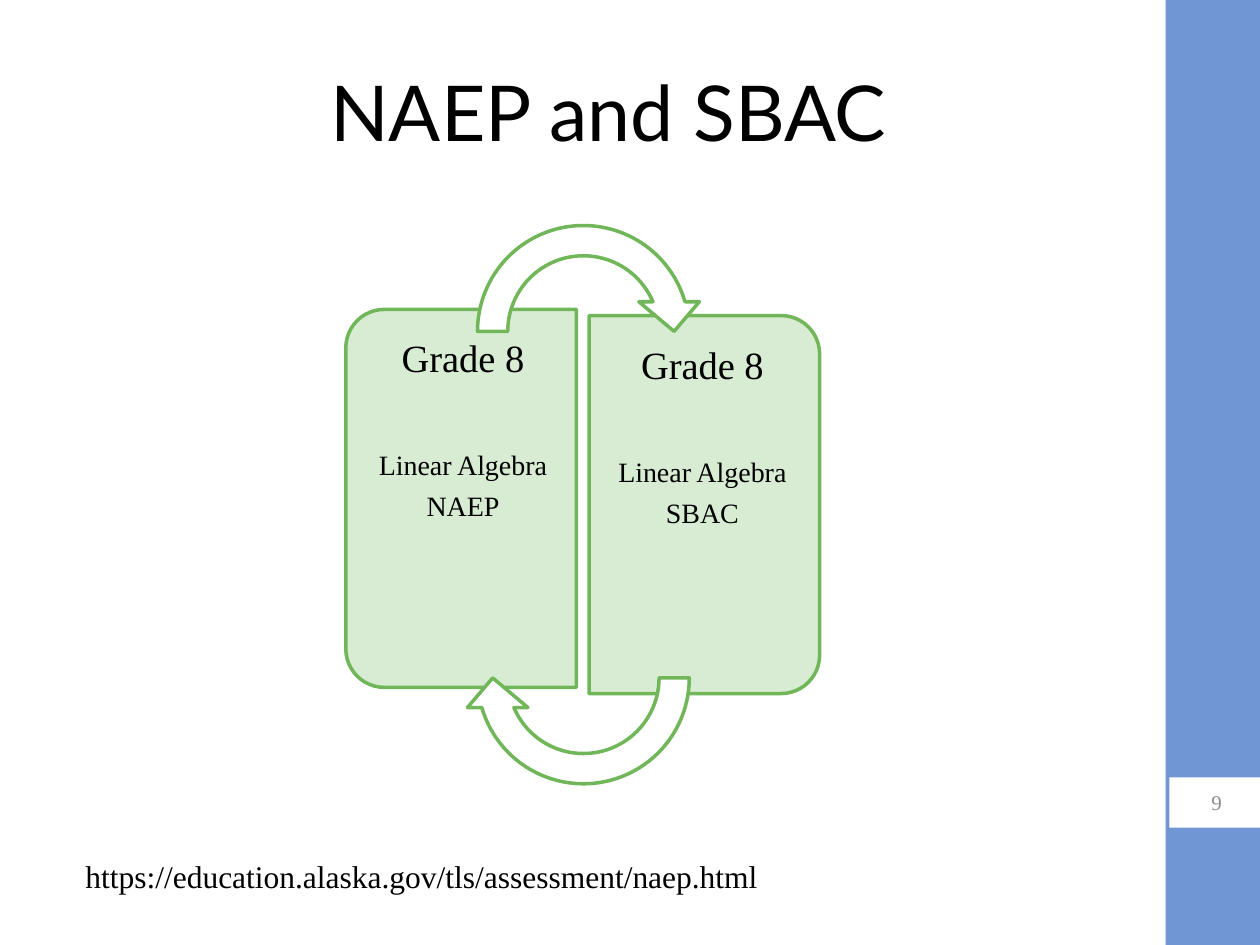
from dataclasses import dataclass

from pptx import Presentation
from pptx.dml.color import RGBColor
from pptx.enum.shapes import MSO_SHAPE as Shape
from pptx.enum.text import MSO_ANCHOR as Anchor, PP_ALIGN as Align
from pptx.util import Inches, Pt

COLORS = {
    "band": "7097D3",
    "white": "FFFFFF",
    "text": "000000",
    "number": "8C8C8C",
    "panel": "D7ECD3",
    "outline": "71B759",
}
SERIF = "Times New Roman"
PANEL_ADJ = (0.167, 0)
ARROW_ADJ = (0.125, 11.423, 204.577, 108, 0.125)


@dataclass(frozen=True)
class Box:
    left: float
    top: float
    width: float
    height: float

    def emu(self):
        return [Inches(v) for v in (self.left, self.top, self.width, self.height)]


@dataclass(frozen=True)
class Line:
    text: str
    size: float
    font: str = SERIF
    color: str = "text"
    align: Align = Align.CENTER


@dataclass(frozen=True)
class Panel:
    shape: Box
    rotation: int
    label: Box
    insets: tuple[float, float]
    test: str


@dataclass(frozen=True)
class Arrow:
    box: Box
    rotation: int


PANELS = [
    Panel(Box(2.16, 3.04, 3, 1.83), 270, Box(2.83, 2.54, 1.74, 2.82), (0.09, 0.14), "NAEP"),
    Panel(Box(4.09, 3.09, 3, 1.83), 90, Box(4.68, 2.6, 1.74, 2.82), (0.14, 0.09), "SBAC"),
]
ARROWS = [Arrow(Box(3.67, 1.67, 1.92, 1.92), 0), Arrow(Box(3.67, 4.42, 1.92, 1.92), 180)]


def rgb(name: str) -> RGBColor:
    return RGBColor.from_string(COLORS[name])


def add_filled(shapes, kind: Shape, box: Box, fill: str, outline: str | None = None,
               rotation: int = 0, adjustments: tuple = ()):
    s = shapes.add_shape(kind, *box.emu())
    s.shadow.inherit = False
    s.rotation = rotation
    for i, value in enumerate(adjustments):
        s.adjustments[i] = value
    s.fill.solid()
    s.fill.fore_color.rgb = rgb(fill)
    if outline:
        s.line.color.rgb = rgb(outline)
        s.line.width = Pt(2)
    else:
        s.line.fill.background()
    return s


def write(tf, lines: list[Line], anchor: Anchor = Anchor.TOP, **spacing) -> None:
    tf.word_wrap = True
    tf.vertical_anchor = anchor
    for i, line in enumerate(lines):
        p = tf.add_paragraph() if i else tf.paragraphs[0]
        for name, value in {"alignment": line.align, **spacing}.items():
            setattr(p, name, value)
        r = p.add_run()
        r.text = line.text
        for name, value in {"name": line.font, "size": Pt(line.size)}.items():
            setattr(r.font, name, value)
        r.font.color.rgb = rgb(line.color)


def add_panel(shapes, panel: Panel) -> None:
    add_filled(shapes, Shape.ROUND_2_SAME_RECTANGLE, panel.shape, "panel", "outline",
               panel.rotation, PANEL_ADJ)
    tf = shapes.add_textbox(*panel.label.emu()).text_frame
    left, right = panel.insets
    margins = {"margin_left": left, "margin_right": right, "margin_top": 0.15, "margin_bottom": 0.15}
    for name, value in margins.items():
        setattr(tf, name, Inches(value))
    lines = [Line("Grade 8", 22), Line("Linear Algebra", 16), Line(panel.test, 16)]
    write(tf, lines, line_spacing=0.9, space_after=Pt(6.3))
    tf.paragraphs[1].space_before = Pt(34)


def main() -> None:
    prs = Presentation()
    prs.slide_width, prs.slide_height = Inches(10), Inches(7.5)
    shapes = prs.slides.add_slide(prs.slide_layouts[6]).shapes

    add_filled(shapes, Shape.RECTANGLE, Box(9.25, 0, 0.75, 7.5), "band")
    title = shapes.add_textbox(*Box(0.58, 0.25, 8.5, 1.25).emu())
    write(title.text_frame, [Line("NAEP and SBAC", 44, "Lato")], Anchor.MIDDLE)
    number = add_filled(shapes, Shape.RECTANGLE, Box(9.28, 6.17, 0.75, 0.4), "white")
    write(number.text_frame, [Line("9", 12, color="number")], Anchor.MIDDLE)
    link = shapes.add_textbox(*Box(0.58, 6.75, 6.5, 0.4).emu())
    address = "https://education.alaska.gov/tls/assessment/naep.html"
    write(link.text_frame, [Line(address, 18, align=Align.LEFT)])

    cycle = shapes.add_group_shape().shapes
    for panel in PANELS:
        add_panel(cycle, panel)
    for arrow in ARROWS:
        add_filled(cycle, Shape.CIRCULAR_ARROW, arrow.box, "white", "outline",
                   arrow.rotation, ARROW_ADJ)

    prs.save("out.pptx")


if __name__ == "__main__":
    main()
